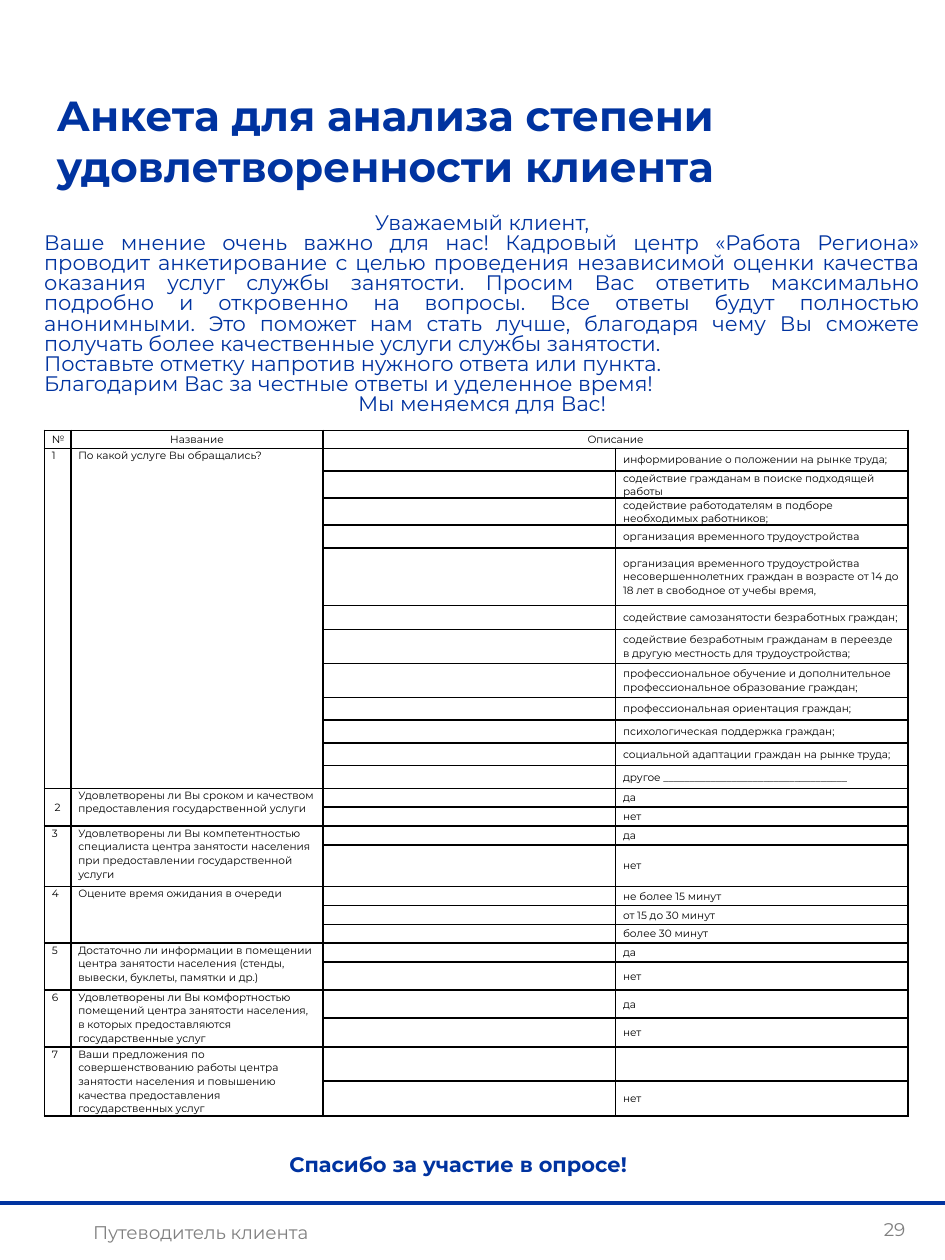
from lxml import etree
from pptx import Presentation, util as u
from pptx.dml.color import RGBColor
from pptx.enum import shapes, text
from pptx.oxml import ns

Pt = u.Pt
FONT = "Montserrat"
BLUE = RGBColor(0x00, 0x33, 0xA0)
GREY = RGBColor(0x80, 0x80, 0x80)
BLACK = RGBColor(0, 0, 0)
LEFT, CENTER, JUSTIFY = (
    text.PP_ALIGN.LEFT, text.PP_ALIGN.CENTER, text.PP_ALIGN.JUSTIFY)
TOP, MIDDLE = text.MSO_ANCHOR.TOP, text.MSO_ANCHOR.MIDDLE

TITLE = "Анкета для анализа степени удовлетворенности клиента"
INTRO = [
    ("Уважаемый клиент,", CENTER),
    ("Ваше мнение очень важно для нас! Кадровый центр «Работа Региона» "
     "проводит анкетирование с целью проведения независимой оценки качества "
     "оказания услуг службы занятости. Просим Вас ответить максимально "
     "подробно и откровенно на вопросы. Все ответы будут полностью "
     "анонимными. Это поможет нам стать лучше, благодаря чему Вы сможете "
     "получать более качественные услуги службы занятости.", JUSTIFY),
    ("Поставьте отметку напротив нужного ответа или пункта.", JUSTIFY),
    ("Благодарим Вас за честные ответы и уделенное время!", LEFT),
    ("Мы меняемся для Вас!", CENTER),
]
COLUMN_WIDTHS = [15.1, 144.2, 167.1, 167.1]
HEADER_HEIGHT = 10.3
# Each question is followed by its answers with their row heights.
QUESTIONS = [
    ("По какой услуге Вы обращались?", [
        ("информирование о положении на рынке труда;", 13),
        ("содействие гражданам в поиске подходящей работы", 15.3),
        ("содействие работодателям в подборе необходимых работников;", 15.3),
        ("организация временного трудоустройства", 13),
        ("организация временного трудоустройства несовершеннолетних граждан "
         "в возрасте от 14 до 18 лет в свободное от учебы время,", 33),
        ("содействие самозанятости безработных граждан;", 13.6),
        ("содействие безработным гражданам в переезде в другую местность "
         "для трудоустройства;", 19.5),
        ("профессиональное обучение и дополнительное профессиональное "
         "образование граждан;", 19.5),
        ("профессиональная ориентация граждан;", 13),
        ("психологическая поддержка граждан;", 13),
        ("социальной адаптации граждан на рынке труда;", 13),
        ("другое ___________________________________", 13)]),
    ("Удовлетворены ли Вы сроком и качеством предоставления "
     "государственной услуги", [("да", 10.8), ("нет", 10.8)]),
    ("Удовлетворены ли Вы компетентностью специалиста центра занятости "
     "населения при предоставлении государственной услуги",
     [("да", 10.8), ("нет", 23.7)]),
    ("Оцените время ожидания в очереди",
     [("не более 15 минут", 10.8), ("от 15 до 30 минут", 10.8),
      ("более 30 минут", 10.8)]),
    ("Достаточно ли информации в помещении центра занятости населения "
     "(стенды, вывески, буклеты, памятки и др.)",
     [("да", 10.8), ("нет", 16)]),
    ("Удовлетворены ли Вы комфортностью помещений центра занятости "
     "населения, в которых предоставляются государственные услуг",
     [("да", 16), ("нет", 16.6)]),
    ("Ваши предложения по совершенствованию работы центра занятости "
     "населения и повышению качества предоставления государственных услуг",
     [("", 19.5), ("нет", 20)]),
]


def add_span(para, words, size, color, bold=False):
    span = para.add_run()
    span.text = words
    span.font.name = FONT
    span.font.size = Pt(size)
    span.font.bold = bold
    span.font.color.rgb = color


def add_text(page, box, lines, size, color, bold=False, spacing=None, after=None):
    """Place (words, alignment) paragraphs in a box of left, top, width, height."""
    frame = page.shapes.add_textbox(*map(Pt, box)).text_frame
    frame.word_wrap = True
    frame.auto_size = text.MSO_AUTO_SIZE.SHAPE_TO_FIT_TEXT
    for index, (words, align) in enumerate(lines):
        para = frame.add_paragraph() if index else frame.paragraphs[0]
        para.alignment = align
        if spacing is not None:
            para.line_spacing = spacing
        if after is not None:
            para.space_after = Pt(after)
        add_span(para, words, size, color, bold)


def style_cell(cell):
    """Give a cell black borders, no fill and small type even when empty."""
    properties = cell._tc.get_or_add_tcPr()
    for side in ("a:lnL", "a:lnR", "a:lnT", "a:lnB"):
        border = etree.SubElement(properties, ns.qn(side), w=str(Pt(1)))
        fill = etree.SubElement(border, ns.qn("a:solidFill"))
        etree.SubElement(fill, ns.qn("a:srgbClr"), val=str(BLACK))
    cell.fill.background()
    cell.margin_left = cell.margin_right = Pt(4.3)
    cell.margin_top = cell.margin_bottom = 0
    para = cell.text_frame.paragraphs[0]
    etree.SubElement(para._p, ns.qn("a:endParaRPr"), sz="600")


def fill_cell(cell, words, align=LEFT, anchor=MIDDLE):
    if not words:
        return
    cell.vertical_anchor = anchor
    para = cell.text_frame.paragraphs[0]
    para.alignment = align
    para.line_spacing = 1.07
    add_span(para, words, 6, BLACK)


def add_survey(page, left, top):
    heights = [HEADER_HEIGHT] + [
        height for _, answers in QUESTIONS for _, height in answers]
    table = page.shapes.add_table(
        len(heights), len(COLUMN_WIDTHS), Pt(left), Pt(top),
        Pt(sum(COLUMN_WIDTHS)), Pt(sum(heights))).table
    table.first_row = table.horz_banding = False
    for column, width in zip(table.columns, COLUMN_WIDTHS):
        column.width = Pt(width)
    for row, height in zip(table.rows, heights):
        row.height = Pt(height)
        for cell in row.cells:
            style_cell(cell)

    table.cell(0, 2).merge(table.cell(0, 3))
    for column, (words, align) in enumerate(
            [("№", LEFT), ("Название", CENTER), ("Описание", CENTER)]):
        fill_cell(table.cell(0, column), words, align)

    first = 1
    for number, (question, answers) in enumerate(QUESTIONS, 1):
        last = first + len(answers) - 1
        for column in (0, 1):
            table.cell(first, column).merge(table.cell(last, column))
        centred = number == 2
        fill_cell(table.cell(first, 0), str(number),
                  CENTER if centred else LEFT, MIDDLE if centred else TOP)
        fill_cell(table.cell(first, 1), question, anchor=TOP)
        for row, (answer, _) in enumerate(answers, first):
            fill_cell(table.cell(row, 3), answer)
        first = last + 1


def add_footer(page, top, width):
    rule = page.shapes.add_connector(
        shapes.MSO_CONNECTOR.STRAIGHT, 0, Pt(top), Pt(width), Pt(top))
    rule.line.color.rgb = BLUE
    rule.line.width = Pt(2.25)
    etree.SubElement(rule._element.spPr, ns.qn("a:effectLst"))
    add_text(page, (-46.3, top + 6.5, 322, 20),
             [("Путеводитель клиента", CENTER)], 10.5, GREY)
    add_text(page, (495, top + 5, 32.4, 20), [("29", CENTER)], 10.5, GREY)


def main():
    deck = Presentation()
    deck.slide_width, deck.slide_height = Pt(540), Pt(720)
    page = deck.slides.add_slide(deck.slide_layouts[6])
    add_text(page, (25.3, 47.8, 514.8, 65.5), [(TITLE, LEFT)], 24, BLUE, bold=True)
    add_text(page, (18.1, 118.9, 514.8, 124), INTRO, 12, BLUE, spacing=0.8)
    add_survey(page, 25.4, 246)
    add_text(page, (126.9, 653.3, 270, 22.3),
             [("Спасибо за участие в опросе!", CENTER)], 12, BLUE,
             bold=True, spacing=1.07, after=8)
    add_footer(page, 687.6, 540)
    deck.save("out.pptx")


if __name__ == "__main__":
    main()
